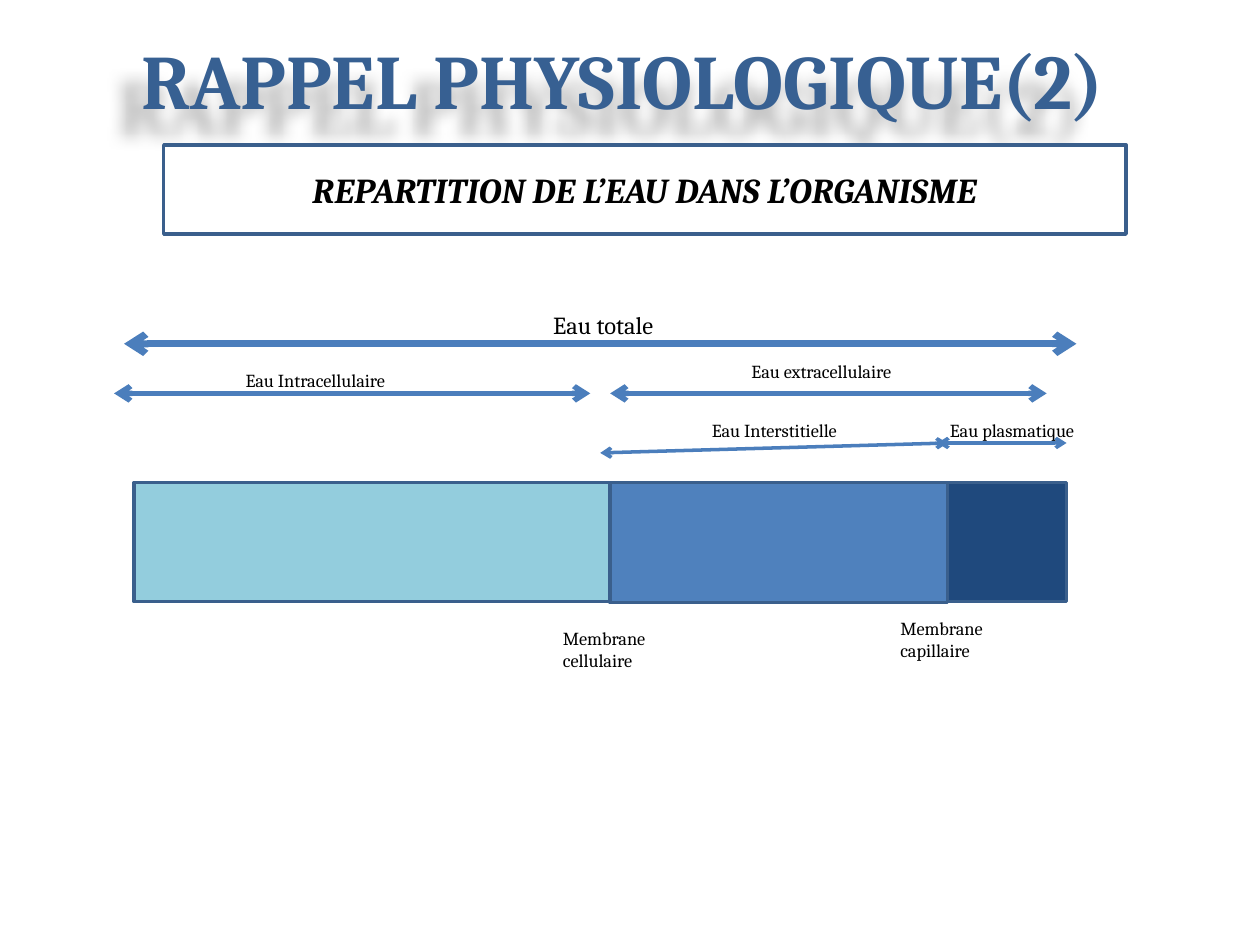
from lxml.etree import SubElement
from pptx import Presentation
from pptx.dml.color import RGBColor
from pptx.enum.shapes import MSO_CONNECTOR, MSO_SHAPE
from pptx.enum.text import MSO_ANCHOR, PP_ALIGN
from pptx.oxml.ns import qn
from pptx.util import Cm, Pt

FONT = "Cambria"
COLORS = {
    "title": "376092", "text": "000000", "white": "FFFFFF",
    "outline": "3A5F8C", "arrow": "4B7EBC",
    "intracellular": "93CDDD", "interstitial": "4F81BD", "plasma": "1F497D",
}

# Content; all lengths in cm
TITLE = "RAPPEL PHYSIOLOGIQUE(2) "
SUBTITLE = "REPARTITION DE L’EAU DANS L’ORGANISME"
LABELS = [  # text, left, top, width, height, size
    ("Eau Intracellulaire", 4.7, 7.32, 3.6, 0.7, 10.5),
    ("Eau extracellulaire", 14.9, 7.14, 3.6, 0.74, 10.5),
    ("Eau plasmatique", 18.9, 8.33, 3.2, 1.14, 10.5),
    ("Eau Interstitielle", 14.1, 8.33, 3.2, 0.74, 10.5),
    ("Membrane cellulaire", 11.1, 12.52, 2.6, 1.2, 10.5),
    ("Membrane capillaire", 17.9, 12.32, 2.4, 1.2, 10.5),
    ("Eau totale", 10.9, 6.12, 3.6, 0.86, 14),
]
BAR_LEFT, BAR_TOP = 2.7, 9.73
COMPARTMENTS = [  # colour, width, height
    ("intracellular", 9.6, 2.4), ("interstitial", 6.8, 2.42), ("plasma", 2.4, 2.4),
]
ARROWS = [  # x1, y1, x2, y2, line width in points
    (21.7, 6.93, 2.5, 6.93, 4),
    (11.9, 7.93, 2.3, 7.93, 3),
    (21.1, 7.93, 12.3, 7.93, 3),
    (12.1, 9.13, 19.1, 8.93, 2),
    (18.9, 8.93, 21.5, 8.93, 2),
]


def rgb(name):
    return RGBColor.from_string(COLORS[name])


def write(sp, text, size, color="text", align=PP_ALIGN.LEFT,
          anchor=MSO_ANCHOR.TOP, bold=False, italic=False):
    tf = sp.text_frame
    tf.word_wrap = True
    tf.vertical_anchor = anchor
    tf.text = text
    p = tf.paragraphs[0]
    p.alignment = align
    font = p.runs[0].font
    font.name, font.size = FONT, Pt(size)
    font.bold, font.italic = bold, italic
    font.color.rgb = rgb(color)


def add_box(slide, left, top, width, height, fill):
    sp = slide.shapes.add_shape(MSO_SHAPE.RECTANGLE, Cm(left), Cm(top), Cm(width), Cm(height))
    sp.shadow.inherit = False
    sp.fill.solid()
    sp.fill.fore_color.rgb = rgb(fill)
    sp.line.color.rgb = rgb("outline")
    sp.line.width = Pt(2)
    return sp


def add_title_shadow(sp):
    effects = SubElement(sp.element.spPr, qn("a:effectLst"))
    shadow = SubElement(effects, qn("a:outerShdw"), blurRad=str(Cm(0.3)),
                        dist=str(Cm(0.7)), dir="8100000", algn="tr", rotWithShape="0")
    color = SubElement(shadow, qn("a:srgbClr"), val=COLORS["text"])
    SubElement(color, qn("a:alpha"), val="30000")


def add_arrow(slide, x1, y1, x2, y2, width):
    cx = slide.shapes.add_connector(MSO_CONNECTOR.STRAIGHT, Cm(x1), Cm(y1), Cm(x2), Cm(y2))
    cx.line.color.rgb = rgb("arrow")
    cx.line.width = Pt(width)
    ln = cx.line._get_or_add_ln()
    for end in ("a:headEnd", "a:tailEnd"):
        SubElement(ln, qn(end), type="arrow")
    SubElement(cx.element.spPr, qn("a:effectLst"))


def main():
    prs = Presentation()
    prs.slide_width, prs.slide_height = Cm(25.4), Cm(19.05)
    slide = prs.slides.add_slide(prs.slide_layouts[5])

    # Title and subtitle box
    title = slide.shapes.title
    title.left, title.top, title.width, title.height = Cm(1.3), Cm(0), Cm(22.86), Cm(3.18)
    write(title, TITLE, 44, "title", PP_ALIGN.CENTER, MSO_ANCHOR.MIDDLE, bold=True)
    add_title_shadow(title)
    box = add_box(slide, 3.3, 2.92, 19.4, 1.8, "white")
    write(box, SUBTITLE, 20, "text", PP_ALIGN.CENTER, MSO_ANCHOR.MIDDLE, bold=True, italic=True)

    # Labels
    for text, left, top, width, height, size in LABELS:
        sp = slide.shapes.add_textbox(Cm(left), Cm(top), Cm(width), Cm(height))
        write(sp, text, size)

    # Water compartments, side by side
    left = BAR_LEFT
    for color, width, height in COMPARTMENTS:
        add_box(slide, left, BAR_TOP, width, height, color)
        left += width

    # Extent arrows
    for arrow in ARROWS:
        add_arrow(slide, *arrow)

    prs.save("out.pptx")


if __name__ == "__main__":
    main()
